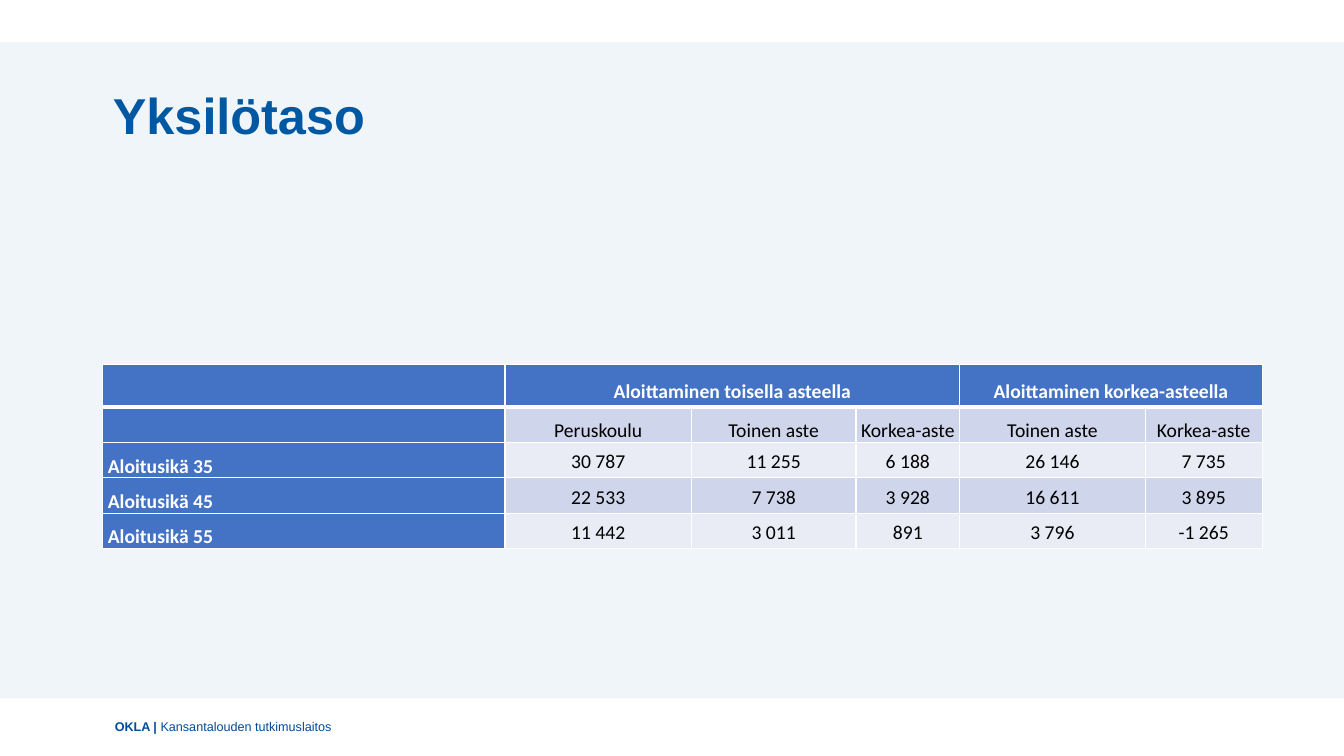
from dataclasses import dataclass

from lxml import etree
from pptx import Presentation
from pptx.dml.color import RGBColor
from pptx.enum.shapes import MSO_SHAPE
from pptx.enum.text import MSO_ANCHOR, PP_ALIGN
from pptx.oxml.ns import qn
from pptx.util import Inches, Pt

RECT = MSO_SHAPE.RECTANGLE
MIDDLE, BOTTOM = MSO_ANCHOR.MIDDLE, MSO_ANCHOR.BOTTOM
LEFT, CENTER = PP_ALIGN.LEFT, PP_ALIGN.CENTER
WIDE, HIGH = Inches(13.33), Inches(7.5)
WHITE, BLACK = "FFFFFF", "000000"
NAVY, BLUE, HEAD = "004B9A", "0058A2", "4472C4"
DARK, PALE = "CFD5EA", "E9EBF5"

COLS = [29.93, 13.88, 12.23, 7.73, 13.8, 8.7]
ROWS = [5.6] + [2.93] * 4
DATA = [
    ["", "Aloittaminen toisella asteella", "", "", "Aloittaminen korkea-asteella", ""],
    ["", "Peruskoulu", "Toinen aste", "Korkea-aste", "Toinen aste", "Korkea-aste"],
    ["Aloitusikä 35", "30 787", "11 255", "6 188", "26 146", "7 735"],
    ["Aloitusikä 45", "22 533", "7 738", "3 928", "16 611", "3 895"],
    ["Aloitusikä 55", "11 442", "3 011", "891", "3 796", "-1 265"],
]
SPANS = [(1, 3), (4, 5)]


@dataclass(frozen=True)
class Box:
    """A frame in percent of the slide's width and height."""
    left: float
    top: float
    width: float
    height: float

    def frame(self) -> tuple[int, int, int, int]:
        return across(self.left), down(self.top), across(self.width), down(self.height)


BANDS = [Box(0, 92.4, 100, 7.6), Box(0, 0, 100, 5.6)]
TITLE = Box(7.65, 7.07, 86.27, 17.07)
GRID = Box(7.65, 48.27, sum(COLS), sum(ROWS))
FOOT = Box(7.8, 94.4, 20.56, 3.33)


def across(share: float) -> int:
    return round(WIDE * share / 100)


def down(share: float) -> int:
    return round(HIGH * share / 100)


def paint(fill, color: str) -> None:
    fill.solid()
    fill.fore_color.rgb = RGBColor.from_string(color)


def style(font, name: str, size: float, color: str) -> None:
    font.name, font.size = name, Pt(size)
    font.color.rgb = RGBColor.from_string(color)


def edge(cell, side: str, width: float) -> None:
    line = etree.SubElement(cell._tc.get_or_add_tcPr(), qn(f"a:ln{side}"), w=str(Pt(width)))
    fill = etree.SubElement(line, qn("a:solidFill"))
    etree.SubElement(fill, qn("a:srgbClr"), val=WHITE)


def draw_band(slide, box: Box) -> None:
    band = slide.shapes.add_shape(RECT, *box.frame())
    band.shadow.inherit = False
    paint(band.fill, WHITE)
    band.line.fill.background()


def draw_title(slide) -> None:
    title = slide.shapes.title
    title.left, title.top, title.width, title.height = TITLE.frame()
    text = title.text_frame
    text.text, text.vertical_anchor = "Yksilötaso", MIDDLE
    para = text.paragraphs[0]
    para.alignment, para.line_spacing = LEFT, 0.9
    style(para.font, "Arial", 36, BLUE)
    para.font.bold = True


def draw_foot(slide) -> None:
    text = slide.shapes.add_textbox(*FOOT.frame()).text_frame
    text.word_wrap = True
    para = text.paragraphs[0]
    style(para.font, "Arial", 9, NAVY)
    for words, bold in [("OKLA | ", True), ("Kansantalouden tutkimuslaitos", False)]:
        run = para.add_run()
        run.text, run.font.bold = words, bold


def fill_cell(cell, row: int, col: int) -> None:
    head = row == 0 or col == 0
    for side in "LRTB":
        thick = (row, side) in [(0, "B"), (1, "T")]
        edge(cell, side, 3 if thick else 1)
    paint(cell.fill, HEAD if head else DARK if row % 2 else PALE)
    cell.margin_left = cell.margin_right = Inches(0.05)
    cell.margin_top = cell.margin_bottom = 0
    cell.vertical_anchor = MIDDLE if col else BOTTOM
    cell.text = DATA[row][col]
    para = cell.text_frame.paragraphs[0]
    para.alignment = CENTER if col else LEFT
    para.line_spacing = 1.15 if row > 1 and col else 1.5
    para.space_after = Pt(8)
    style(para.font, "Calibri", 14, WHITE if head else BLACK)
    para.font.bold = head


def draw_table(slide) -> None:
    table = slide.shapes.add_table(len(ROWS), len(COLS), *GRID.frame()).table
    table.first_col, table.horz_banding = True, False
    for col, share in zip(table.columns, COLS):
        col.width = across(share)
    for row, share in zip(table.rows, ROWS):
        row.height = down(share)
    for row in range(len(ROWS)):
        for col in range(len(COLS)):
            fill_cell(table.cell(row, col), row, col)
    for start, end in SPANS:
        table.cell(0, start).merge(table.cell(0, end))


def main() -> None:
    deck = Presentation()
    deck.slide_width, deck.slide_height = WIDE, HIGH
    slide = deck.slides.add_slide(deck.slide_layouts[5])
    paint(slide.background.fill, "F0F5F9")
    for box in BANDS:
        draw_band(slide, box)
    draw_foot(slide)
    draw_title(slide)
    draw_table(slide)
    deck.save("out.pptx")


if __name__ == "__main__":
    main()
